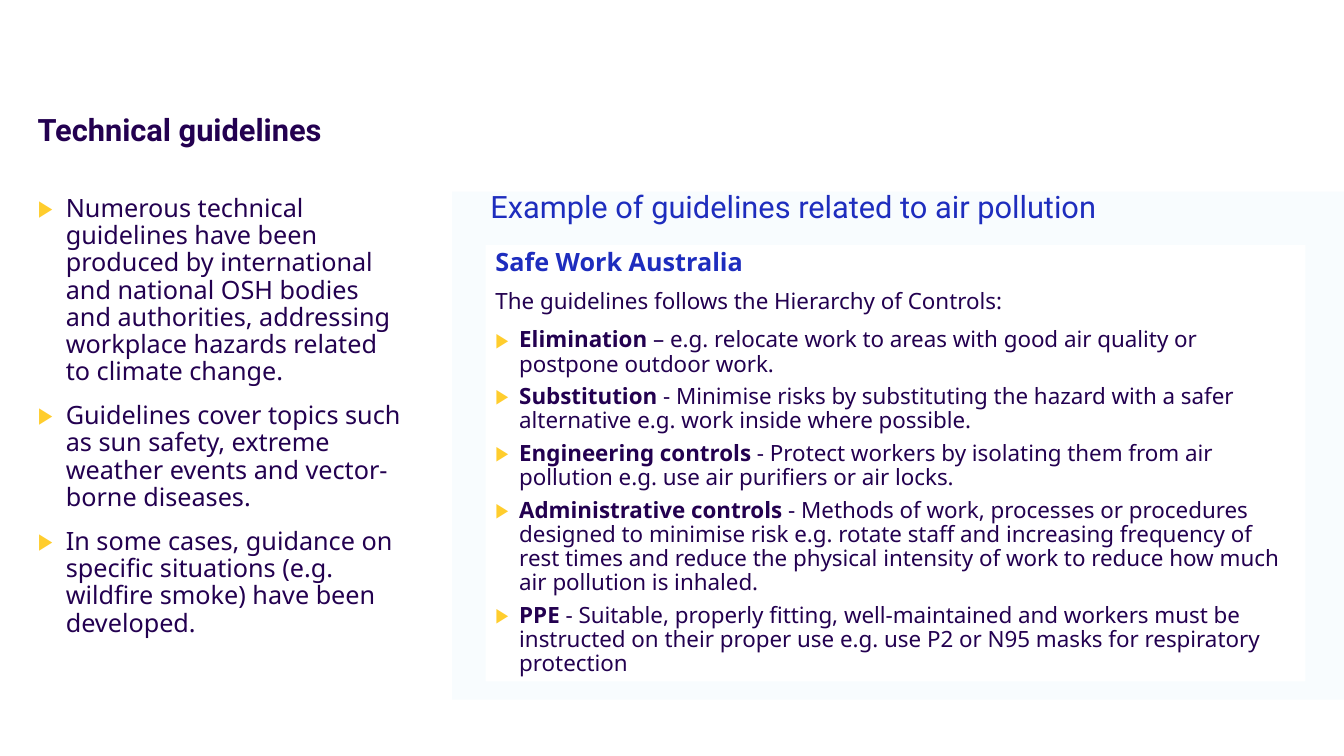
from dataclasses import dataclass

from lxml import etree
from pptx import Presentation
from pptx.dml.color import RGBColor
from pptx.enum.shapes import MSO_SHAPE
from pptx.enum.text import MSO_ANCHOR, MSO_AUTO_SIZE, PP_ALIGN
from pptx.oxml.ns import qn
from pptx.util import Pt

RECTANGLE = MSO_SHAPE.RECTANGLE
TOP = MSO_ANCHOR.TOP
NO_AUTOFIT = MSO_AUTO_SIZE.NONE
LEFT = PP_ALIGN.LEFT

COLORS = {
    "text": "230050",
    "heading": "1E2DBE",
    "bullet": "FFCD2D",
    "panel": "F8FCFE",
    "card": "FFFFFF",
}
TITLE_FONT = "Roboto"
BODY_FONT = "Noto Sans"
LINE_SPACING = 0.9
TWO_CONTENT_LAYOUT = 3


@dataclass(frozen=True)
class Box:
    left: float
    top: float
    width: float
    height: float


@dataclass(frozen=True)
class Style:
    size: float
    font: str = BODY_FONT
    color: str = "text"
    bold: bool = False
    before: float = 0
    after: float = 0
    bullet_indent: float = 0


@dataclass(frozen=True)
class Entry:
    """A paragraph with an optional bold lead-in before its text."""
    text: str
    style: Style
    lead: str = ""


TITLE_BOX = Box(26.8, 82, 907.2, 39.6)
TOPICS_BOX = Box(27, 139.7, 262.8, 362.9)
PANEL_BOX = Box(323, 136.8, 637, 362.9)
CARD_BOX = Box(346.8, 175, 585.6, 311.8)
PANEL_INDENT = 27.3

TITLE = Style(22, TITLE_FONT, bold=True)
PANEL_HEADING = Style(22, TITLE_FONT, "heading")
TOPIC = Style(18, before=6, after=6, bullet_indent=20)
CARD_HEADING = Style(18, color="heading", bold=True, after=4.5)
CARD_INTRO = Style(16, before=4.5, after=4.5)
CONTROL = Style(16, before=6, bullet_indent=17)

TOPICS = [Entry(text, TOPIC) for text in (
    "Numerous technical guidelines have been produced by international and "
    "national OSH bodies and authorities, addressing workplace hazards "
    "related to climate change.",
    "Guidelines cover topics such as sun safety, extreme weather events and "
    "vector-borne diseases.",
    "In some cases, guidance on specific situations (e.g. wildfire smoke) "
    "have been developed.",
)]
CONTROLS = [Entry(text, CONTROL, lead) for lead, text in (
    ("Elimination",
     " – e.g. relocate work to areas with good air quality or postpone "
     "outdoor work."),
    ("Substitution",
     " - Minimise risks by substituting the hazard with a safer alternative "
     "e.g. work inside where possible."),
    ("Engineering controls",
     " - Protect workers by isolating them from air pollution e.g. use air "
     "purifiers or air locks."),
    ("Administrative controls",
     " - Methods of work, processes or procedures designed to minimise risk "
     "e.g. rotate staff and increasing frequency of rest times and reduce "
     "the physical intensity of work to reduce how much air pollution is "
     "inhaled."),
    ("PPE",
     " - Suitable, properly fitting, well-maintained and workers must be "
     "instructed on their proper use e.g. use P2 or N95 masks for "
     "respiratory protection"),
)]
CARD = [
    Entry("Safe Work Australia", CARD_HEADING),
    Entry("The guidelines follows the Hierarchy of Controls:", CARD_INTRO),
    *CONTROLS,
]


def set_bullet(paragraph, indent: float) -> None:
    """Give the paragraph a triangle bullet, or none when indent is zero."""
    properties = paragraph._p.get_or_add_pPr()
    properties.set("marL", str(Pt(indent)))
    properties.set("indent", str(-Pt(indent)))
    if not indent:
        etree.SubElement(properties, qn("a:buNone"))
        return
    color = etree.SubElement(properties, qn("a:buClr"))
    etree.SubElement(color, qn("a:srgbClr"), val=COLORS["bullet"])
    etree.SubElement(properties, qn("a:buSzPct"), val="90000")
    etree.SubElement(properties, qn("a:buFont"), typeface=BODY_FONT)
    etree.SubElement(properties, qn("a:buChar"), char="▶")


def format_run(run, style: Style, bold: bool) -> None:
    run.font.name = style.font
    run.font.size = Pt(style.size)
    run.font.bold = bold
    run.font.color.rgb = RGBColor.from_string(COLORS[style.color])


def place(shape, box: Box) -> None:
    shape.left, shape.top = Pt(box.left), Pt(box.top)
    shape.width, shape.height = Pt(box.width), Pt(box.height)


def fill_solid(shape, color: str) -> None:
    shape.fill.solid()
    shape.fill.fore_color.rgb = RGBColor.from_string(COLORS[color])


def write_entries(shape, entries: list[Entry], inset_x: float = 0,
                  inset_y: float = 0) -> None:
    frame = shape.text_frame
    frame.word_wrap = True
    frame.auto_size = NO_AUTOFIT
    frame.vertical_anchor = TOP
    frame.margin_left = frame.margin_right = Pt(inset_x)
    frame.margin_top = frame.margin_bottom = Pt(inset_y)
    for index, entry in enumerate(entries):
        style = entry.style
        paragraph = frame.add_paragraph() if index else frame.paragraphs[0]
        set_bullet(paragraph, style.bullet_indent)
        paragraph.alignment = LEFT
        paragraph.line_spacing = LINE_SPACING
        paragraph.space_before = Pt(style.before if index else 0)
        paragraph.space_after = Pt(style.after)
        paragraph.text = entry.lead or entry.text
        format_run(paragraph.runs[0], style, style.bold or bool(entry.lead))
        if entry.lead:
            run = paragraph.add_run()
            run.text = entry.text
            format_run(run, style, style.bold)


def main() -> None:
    presentation = Presentation()
    presentation.slide_width, presentation.slide_height = Pt(960), Pt(540)
    layout = presentation.slide_layouts[TWO_CONTENT_LAYOUT]
    slide = presentation.slides.add_slide(layout)
    title, topics, panel = slide.placeholders

    place(title, TITLE_BOX)
    write_entries(title, [Entry("Technical guidelines", TITLE)])

    place(topics, TOPICS_BOX)
    write_entries(topics, TOPICS)

    place(panel, PANEL_BOX)
    fill_solid(panel, "panel")
    panel_heading = "Example of guidelines related to air pollution"
    write_entries(panel, [Entry(panel_heading, PANEL_HEADING)], PANEL_INDENT)

    card = slide.shapes.add_shape(RECTANGLE, Pt(0), Pt(0), Pt(1), Pt(1))
    place(card, CARD_BOX)
    card.shadow.inherit = False
    fill_solid(card, "card")
    card.line.fill.background()
    write_entries(card, CARD, 7.2, 3.6)

    presentation.save("out.pptx")


if __name__ == "__main__":
    main()
